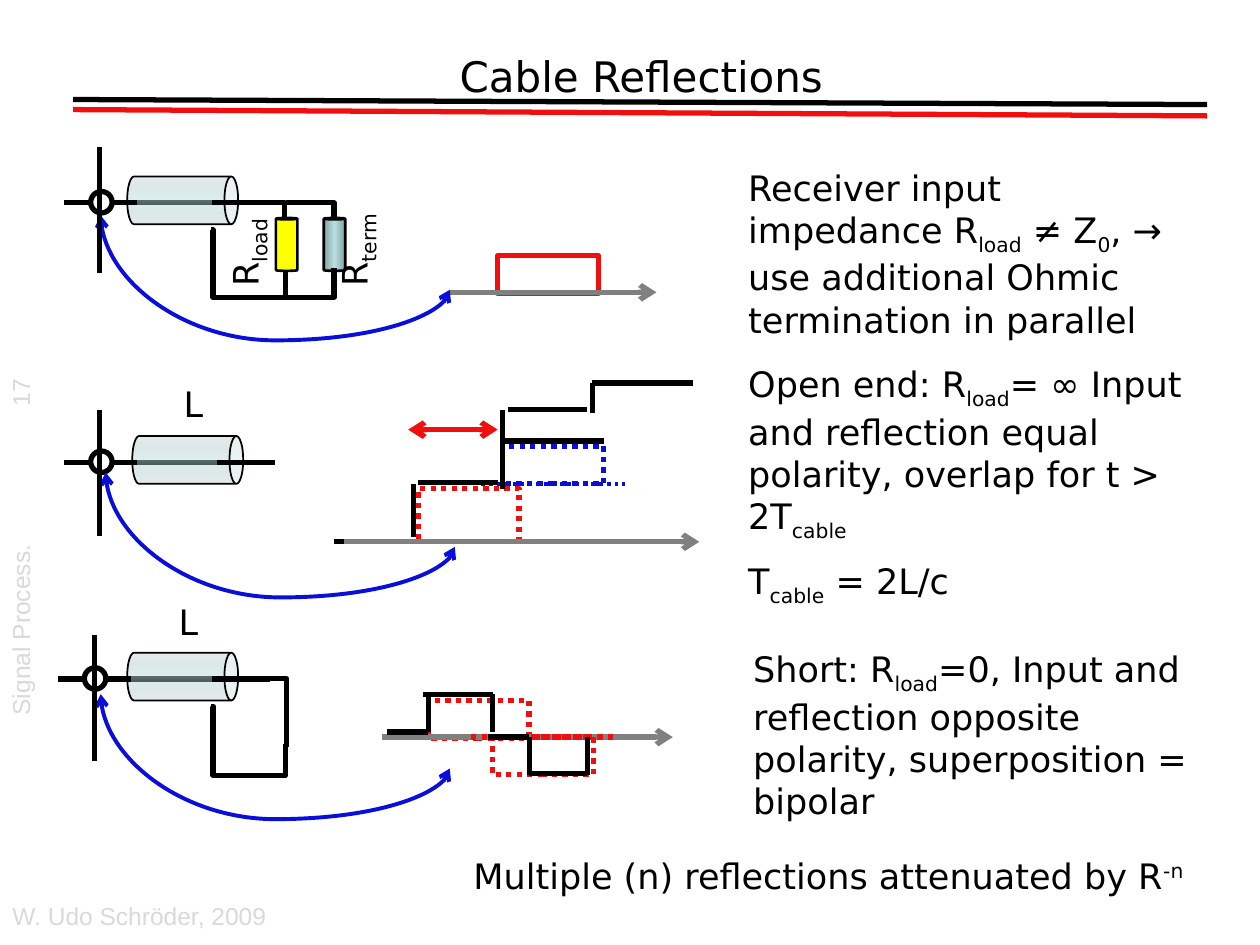
from dataclasses import dataclass

from pptx import Presentation
from pptx.dml.color import RGBColor
from pptx.enum.dml import MSO_LINE
from pptx.enum.shapes import MSO_CONNECTOR, MSO_SHAPE
from pptx.enum.text import MSO_ANCHOR, PP_ALIGN
from pptx.oxml import parse_xml
from pptx.oxml.ns import nsdecls, qn
from pptx.util import Inches, Pt

COLORS = {"black": "000000", "red": "F00E0E", "blue": "090EDB", "gray": "808080", "pale": "D9D9D9",
          "yellow": "FFFF00", "white": "FFFFFF", "steel": "86A0A2", "ice": "BBE0E3"}
PULSE_WIDTH, PULSE_HEIGHT = 0.8, 0.3

presentation = Presentation()
presentation.slide_width, presentation.slide_height = Inches(10), Inches(7.5)
slide = presentation.slides.add_slide(presentation.slide_layouts[6])


@dataclass
class Line:
    x1: float
    y1: float
    x2: float
    y2: float
    color: str = "black"
    width: float = 3
    dotted: bool = False
    arrows: tuple = ()


@dataclass
class Pulse:
    left: float
    top: float
    color: str = "red"
    dotted: bool = True
    height: float = PULSE_HEIGHT


@dataclass
class Route:
    """Unrotated frame, turn and adjustments of an angled or curved connector."""
    preset: str
    left: float
    top: float
    width: float
    height: float
    adjustments: tuple = ()
    rotation: int = 0
    flip: str = ""


@dataclass
class Circuit:
    y: float
    cable_x: float
    node_x: float
    probe_x: float
    probe_top: float
    arc_x: float
    arc_y: float


@dataclass
class Label:
    left: float
    top: float
    width: float
    height: float
    paragraphs: list  # each paragraph is a list of (text, baseline percent)
    size: float = 20
    centered: bool = False
    rotation: int = 0
    font: str = "DejaVu Sans"
    color: str = "black"
    anchor: MSO_ANCHOR = MSO_ANCHOR.TOP


def rgb(name: str) -> RGBColor:
    return RGBColor.from_string(COLORS[name])


def style_line(line, color: str, width: float, dotted: bool = False) -> None:
    line.color.rgb = rgb(color)
    line.width = Pt(width)
    if dotted:
        line.dash_style = MSO_LINE.ROUND_DOT


def finish_connector(connector, color: str, width: float, dotted: bool, arrows: tuple) -> None:
    style_line(connector.line, color, width, dotted)
    for end in arrows:  # headEnd must come before tailEnd
        connector.line._get_or_add_ln().append(parse_xml(f'<a:{end} {nsdecls("a")} type="arrow"/>'))
    connector._element.spPr.append(parse_xml(f'<a:effectLst {nsdecls("a")}/>'))


def draw_line(line: Line) -> None:
    connector = slide.shapes.add_connector(MSO_CONNECTOR.STRAIGHT, Inches(line.x1), Inches(line.y1),
                                           Inches(line.x2), Inches(line.y2))
    finish_connector(connector, line.color, line.width, line.dotted, line.arrows)


def draw_route(route: Route, color: str = "black", width: float = 3, arrows: tuple = ()) -> None:
    kind = MSO_CONNECTOR.CURVE if route.preset.startswith("curved") else MSO_CONNECTOR.ELBOW
    connector = slide.shapes.add_connector(
        kind, Inches(route.left), Inches(route.top),
        Inches(route.left + route.width), Inches(route.top + route.height))
    properties = connector._element.spPr
    frame, geometry = properties.find(qn("a:xfrm")), properties.find(qn("a:prstGeom"))
    if route.rotation:
        frame.set("rot", str(route.rotation * 60000))
    if route.flip:
        frame.set(route.flip, "1")
    geometry.set("prst", route.preset)
    guides = "".join(f'<a:gd name="adj{number}" fmla="val {round(value * 100000)}"/>'
                     for number, value in enumerate(route.adjustments, 1))
    for values in geometry.findall(qn("a:avLst")):
        geometry.remove(values)
    geometry.append(parse_xml(f'<a:avLst {nsdecls("a")}>{guides}</a:avLst>'))
    finish_connector(connector, color, width, False, arrows)


def draw_shape(kind, left: float, top: float, width: float, height: float,
               line_color: str, line_width: float, fill: str = "", dotted: bool = False):
    shape = slide.shapes.add_shape(kind, Inches(left), Inches(top), Inches(width), Inches(height))
    shape.shadow.inherit = False
    style_line(shape.line, line_color, line_width, dotted)
    if fill in COLORS:
        shape.fill.solid()
        shape.fill.fore_color.rgb = rgb(fill)
    elif not fill:
        shape.fill.background()
    return shape


def draw_pulse(pulse: Pulse) -> None:
    draw_shape(MSO_SHAPE.RECTANGLE, pulse.left, pulse.top, PULSE_WIDTH, pulse.height,
               pulse.color, 3, dotted=pulse.dotted)


def draw_can(left: float, top: float, width: float, height: float, adjustment: float,
             line_width: float, fill: str = "gradient", opacities: tuple = (100, 100, 100)):
    can = draw_shape(MSO_SHAPE.CAN, left, top, width, height, "black", line_width, fill)
    can.adjustments[0] = adjustment
    if fill == "gradient":
        stops = "".join(
            f'<a:gs pos="{position}000"><a:srgbClr val="{COLORS[color]}">'
            f'<a:alpha val="{opacity}000"/></a:srgbClr></a:gs>'
            for position, color, opacity in zip((0, 50, 100), ("steel", "ice", "steel"), opacities))
        can._element.spPr.find(qn("a:prstGeom")).addnext(parse_xml(
            f'<a:gradFill {nsdecls("a")} rotWithShape="1"><a:gsLst>{stops}</a:gsLst>'
            '<a:lin ang="0" scaled="1"/></a:gradFill>'))
    return can


def draw_circuit(circuit: Circuit) -> None:
    x, y = circuit.cable_x, circuit.y
    draw_line(Line(x, y, x + 0.88, y))
    cable = draw_can(x + 0.29, y - 0.46, 0.38, 0.88, 0.286, 1, opacities=(21, 49, 21))
    cable.rotation = 90
    cable._element.spPr.find(qn("a:xfrm")).set("flipH", "1")
    draw_line(Line(x + 0.71, y, x + 1.17, y))
    draw_line(Line(circuit.node_x - 0.21, y, circuit.node_x + 0.37, y))
    draw_shape(MSO_SHAPE.OVAL, circuit.node_x, y - 0.09, 0.17, 0.17, "black", 3, "white")
    # Signal arc: a frame 0.59 x 2.77 turned about its centre
    draw_route(Route("curvedConnector3", circuit.arc_x + 1.09, circuit.arc_y - 1.09, 0.59, 2.77,
                     (1.68,), 270, "flipH"), "blue", 2.25, ("headEnd", "tailEnd"))
    draw_line(Line(circuit.probe_x, circuit.probe_top, circuit.probe_x, circuit.probe_top + 1))


def draw_label(label: Label) -> None:
    box = slide.shapes.add_textbox(Inches(label.left), Inches(label.top),
                                   Inches(label.width), Inches(label.height))
    box.rotation = label.rotation
    frame = box.text_frame
    frame.word_wrap = True
    frame.vertical_anchor = label.anchor
    for index, runs in enumerate(label.paragraphs):
        paragraph = frame.add_paragraph() if index else frame.paragraphs[0]
        paragraph.alignment = PP_ALIGN.CENTER if label.centered else PP_ALIGN.LEFT
        if index:
            paragraph.space_before = Pt(label.size / 2)
        for text, baseline in runs:
            run = paragraph.add_run()
            run.text = text
            run.font.name, run.font.size = label.font, Pt(label.size)
            run.font.color.rgb = rgb(label.color)
            if baseline:
                run._r.get_or_add_rPr().set("baseline", str(baseline * 1000))


TAIL, BOTH = ("tailEnd",), ("headEnd", "tailEnd")
# Header rules, then the three waveforms from top to bottom
DRAWING = [
    Line(0.58, 0.79, 9.58, 0.83), Line(0.58, 0.87, 9.58, 0.92, "red"),
    # Terminated: single pulse
    Pulse(3.95, 2.03, dotted=False), Line(3.78, 2.32, 4.92, 2.32, "red"),
    Line(3.57, 2.32, 5.21, 2.32, "gray", arrows=TAIL),
    # Open end: staircase
    Pulse(3.32, 3.88, height=0.42), Line(3.15, 4.3, 4.29, 4.3, "black", 2.25, True),
    Pulse(3.99, 3.54, "blue"), Line(3.82, 3.84, 4.96, 3.84, "blue", 2.25, True),
    Line(3.28, 4.26, 3.28, 3.84), Line(3.32, 3.83, 3.95, 3.83), Line(3.99, 3.88, 3.99, 3.5),
    Line(3.99, 3.5, 4.79, 3.5), Line(2.65, 4.3, 3.28, 4.3), Line(3.99, 3.51, 3.99, 3.25),
    Line(4.03, 3.25, 4.66, 3.25), Line(4.7, 3.28, 4.7, 3.04), Line(4.7, 3.04, 5.5, 3.04),
    Line(2.73, 4.3, 5.55, 4.3, "gray", arrows=TAIL), Line(3.24, 3.41, 3.95, 3.41, "red", arrows=BOTH),
    # Short: bipolar pulse
    Pulse(3.4, 5.56), Line(3.24, 5.85, 4.37, 5.85, "red", dotted=True),
    Line(3.03, 5.85, 5.34, 5.85, "gray", arrows=TAIL),
    Pulse(3.91, 5.85), Line(3.74, 5.85, 4.88, 5.85, "red", dotted=True),
    Line(3.07, 5.81, 3.4, 5.81), Line(3.36, 5.51, 3.91, 5.51), Line(3.91, 5.51, 3.91, 5.81),
    Line(3.4, 5.51, 3.4, 5.81), Line(3.87, 5.85, 4.2, 5.85), Line(4.2, 5.85, 4.2, 6.15),
    Line(4.2, 6.14, 4.66, 6.14), Line(4.66, 5.85, 4.66, 6.15),
]
for item in DRAWING:
    draw_line(item) if isinstance(item, Line) else draw_pulse(item)

# Termination and load resistors, with the wires of the first and third circuits
draw_can(2.57, 1.73, 0.17, 0.42, 0.066, 1.5)
for wire in (Route("bentConnector3", 1.85, 1.61, 0.42, 0.34, (0.971,)),
             Route("bentConnector4", 1.82, 1.68, 0.3, 0.59, (-0.789, 0.973), 270, "flipV"),
             Route("bentConnector2", 2.27, 1.61, 0.38, 0.11),
             Route("bentConnector2", 2.27, 2.13, 0.38, 0.23, flip="flipV"),
             Route("bentConnector3", 1.79, 5.44, 0.55, 0.42, (0.022,), 270, "flipH"),
             Route("bentConnector4", 1.82, 5.46, 0.3, 0.59, (-0.828, 0.973), 270, "flipV")):
    draw_route(wire)
draw_can(2.19, 1.73, 0.17, 0.42, 0.066, 1.5, "yellow")

# Cables with their input nodes
for circuit in (Circuit(1.61, 0.97, 0.72, 0.79, 1.17, 0.8, 1.71),
                Circuit(3.67, 1.01, 0.72, 0.79, 3.25, 0.84, 3.75),
                Circuit(5.39, 0.97, 0.67, 0.75, 5.04, 0.8, 5.51)):
    draw_circuit(circuit)

# Texts
LOAD, CABLE = ("load", -25), ("cable", -25)
FOOTER = {"size": 14, "font": "Arial", "color": "pale"}
for label in (
    Label(0.59, 0.28, 9, 0.64, [[("Cable Reflections", 0)]], 24, True, anchor=MSO_ANCHOR.MIDDLE),
    Label(-0.97, 4.8, 2.33, 0.4, [[("Signal Process.", 0)]], centered=True, rotation=270, **FOOTER),
    Label(0, 7.1, 3.17, 0.21, [[("W. Udo Schröder, 2009", 0)]], **FOOTER),
    Label(-0.17, 2.88, 0.61, 0.28, [[("17", 0)]], rotation=270, **FOOTER),
    Label(1.54, 1.79, 0.8, 0.43, [[("R", 0), LOAD]], centered=True, rotation=270),
    Label(2.32, 1.77, 0.97, 0.43, [[("R", 0), ("term", -25)]], centered=True, rotation=270),
    Label(1.01, 2.99, 1.05, 0.43, [[("L", 0)]], centered=True),
    Label(0.97, 4.72, 1.05, 0.43, [[("L", 0)]], centered=True),
    Label(5.84, 1.27, 3.53, 1.43, [[("Receiver input impedance R", 0), LOAD, (" ≠ Z", 0), ("0", -25),
                                    (", → use additional Ohmic termination in parallel", 0)]]),
    Label(5.84, 2.83, 3.74, 1.93, [
        [("Open end: R", 0), LOAD,
         ("= ∞ Input and reflection equal polarity, overlap for t > 2T", 0), CABLE],
        [("T", 0), CABLE, (" = 2L/c", 0)]]),
    Label(5.88, 5.09, 3.74, 1.43, [[
        ("Short: R", 0), LOAD,
        ("=0, Input and reflection opposite polarity, superposition = bipolar", 0)]]),
    Label(3.53, 6.73, 6.09, 0.43, [[("Multiple (n) reflections attenuated by R", 0), ("-n", 30)]],
          centered=True),
):
    draw_label(label)

presentation.save("out.pptx")
